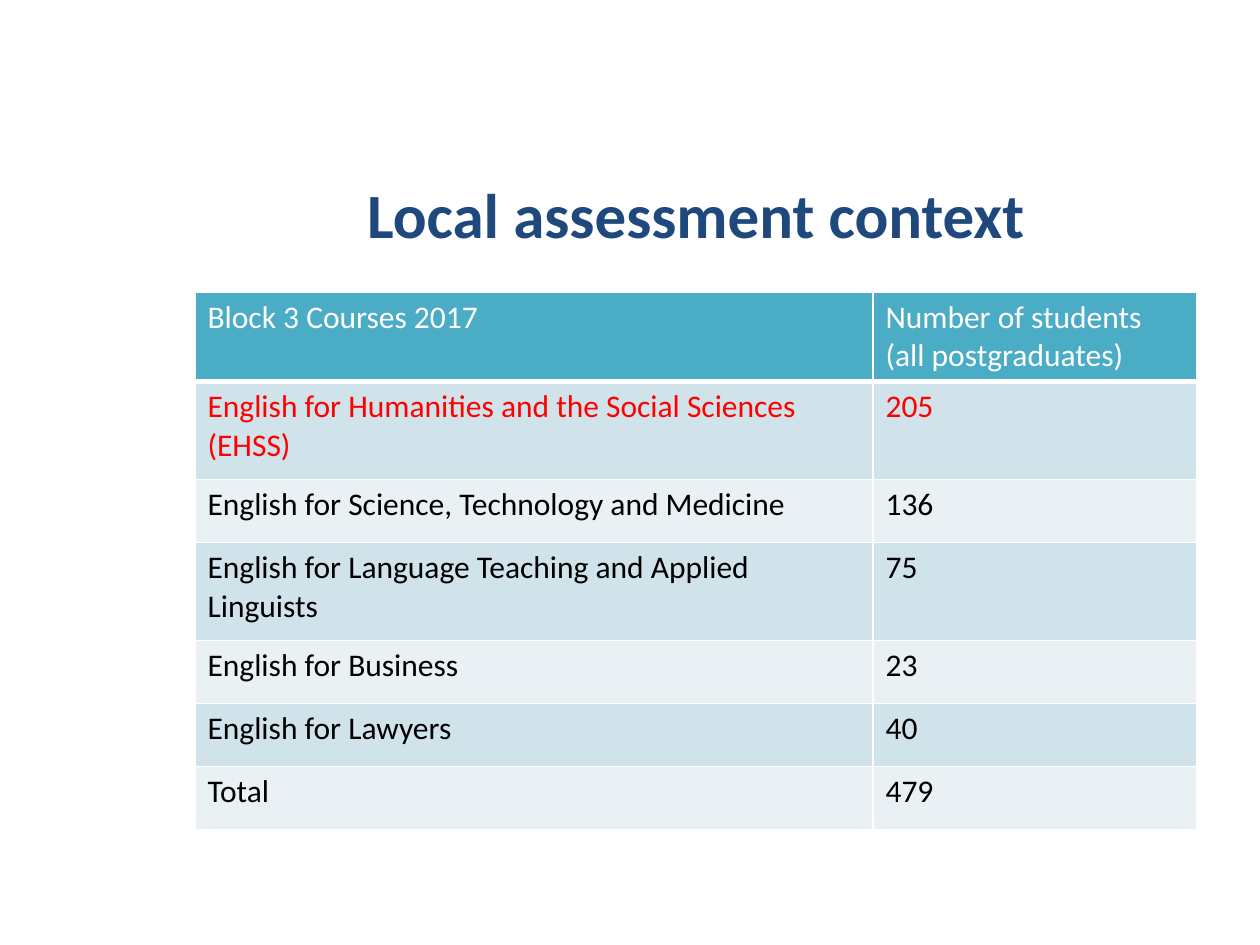
from pptx import Presentation
from pptx import util as u
from pptx.dml.color import RGBColor
from pptx.enum import text
from pptx.oxml import parse_xml
from pptx.oxml.ns import nsdecls

PX = u.Inches(1) / 126
FONT = "Calibri"

NAVY = RGBColor(0x1F, 0x49, 0x7D)
TEAL = RGBColor(0x4B, 0xAC, 0xC6)
BAND_DARK = RGBColor(0xD0, 0xE3, 0xEA)
BAND_LIGHT = RGBColor(0xE9, 0xF1, 0xF5)
WHITE = RGBColor(0xFF, 0xFF, 0xFF)
RED = RGBColor(0xFF, 0x00, 0x00)
BLACK = RGBColor(0x00, 0x00, 0x00)

LEFT, WIDTH = 195, 1002
TITLE_TOP, TITLE_HEIGHT = 135, 157
TABLE_TOP = 292
COLUMN_WIDTHS = [678, 324]
ROW_HEIGHTS = [63, 98, 63, 98, 63, 63, 63]

COURSES = [
    ("Block 3 Courses 2017", "Number of students\n(all postgraduates)"),
    ("English for Humanities and the Social Sciences\n(EHSS)", "205"),
    ("English for Science, Technology and Medicine", "136"),
    ("English for Language Teaching and Applied Linguists", "75"),
    ("English for Business", "23"),
    ("English for Lawyers", "40"),
    ("Total", "479"),
]


def px(length):
    return u.Emu(round(length * PX))


def format_text(text_frame, size, color, bold=False):
    for paragraph in text_frame.paragraphs:
        for run in paragraph.runs:
            font = run.font
            font.name, font.size, font.bold = FONT, u.Pt(size), bold
            font.color.rgb = color


def set_borders(cell, bottom):
    """Draw white 1 pt borders, with the bottom one of the given width in points."""
    properties = cell._tc.get_or_add_tcPr()
    widths = {"lnL": 1, "lnR": 1, "lnT": 1, "lnB": bottom}
    for index, (tag, width) in enumerate(widths.items()):
        properties.insert(index, parse_xml(
            f'<a:{tag} {nsdecls("a")} w="{u.Pt(width)}"><a:solidFill>'
            f'<a:srgbClr val="{WHITE}"/></a:solidFill></a:{tag}>'))


def row_style(index):
    """Return the fill, text colour and bottom border width of a row."""
    if index == 0:
        return TEAL, WHITE, 3
    fill = BAND_DARK if index % 2 else BAND_LIGHT
    return fill, RED if index == 1 else BLACK, 1


def add_title(slide, wording):
    title = slide.shapes.title
    title.left, title.top = px(LEFT), px(TITLE_TOP)
    title.width, title.height = px(WIDTH), px(TITLE_HEIGHT)
    title.text_frame.text = wording
    title.text_frame.vertical_anchor = text.MSO_ANCHOR.MIDDLE
    title.text_frame.paragraphs[0].alignment = text.PP_ALIGN.CENTER
    format_text(title.text_frame, 36, NAVY, bold=True)


def add_course_table(slide):
    table = slide.shapes.add_table(
        len(COURSES), len(COLUMN_WIDTHS), px(LEFT), px(TABLE_TOP),
        px(WIDTH), px(sum(ROW_HEIGHTS))).table
    for column, width in zip(table.columns, COLUMN_WIDTHS):
        column.width = px(width)
    for index, (row, height, values) in enumerate(
            zip(table.rows, ROW_HEIGHTS, COURSES)):
        row.height = px(height)
        fill, color, bottom = row_style(index)
        for cell, value in zip(row.cells, values):
            cell.text_frame.text = value
            format_text(cell.text_frame, 18, color)
            cell.fill.solid()
            cell.fill.fore_color.rgb = fill
            set_borders(cell, bottom)


def main():
    presentation = Presentation()
    presentation.slide_width = u.Inches(10)
    presentation.slide_height = u.Inches(7.5)
    slide = presentation.slides.add_slide(presentation.slide_layouts[5])
    add_title(slide, "Local assessment context")
    add_course_table(slide)
    presentation.save("out.pptx")


if __name__ == "__main__":
    main()
